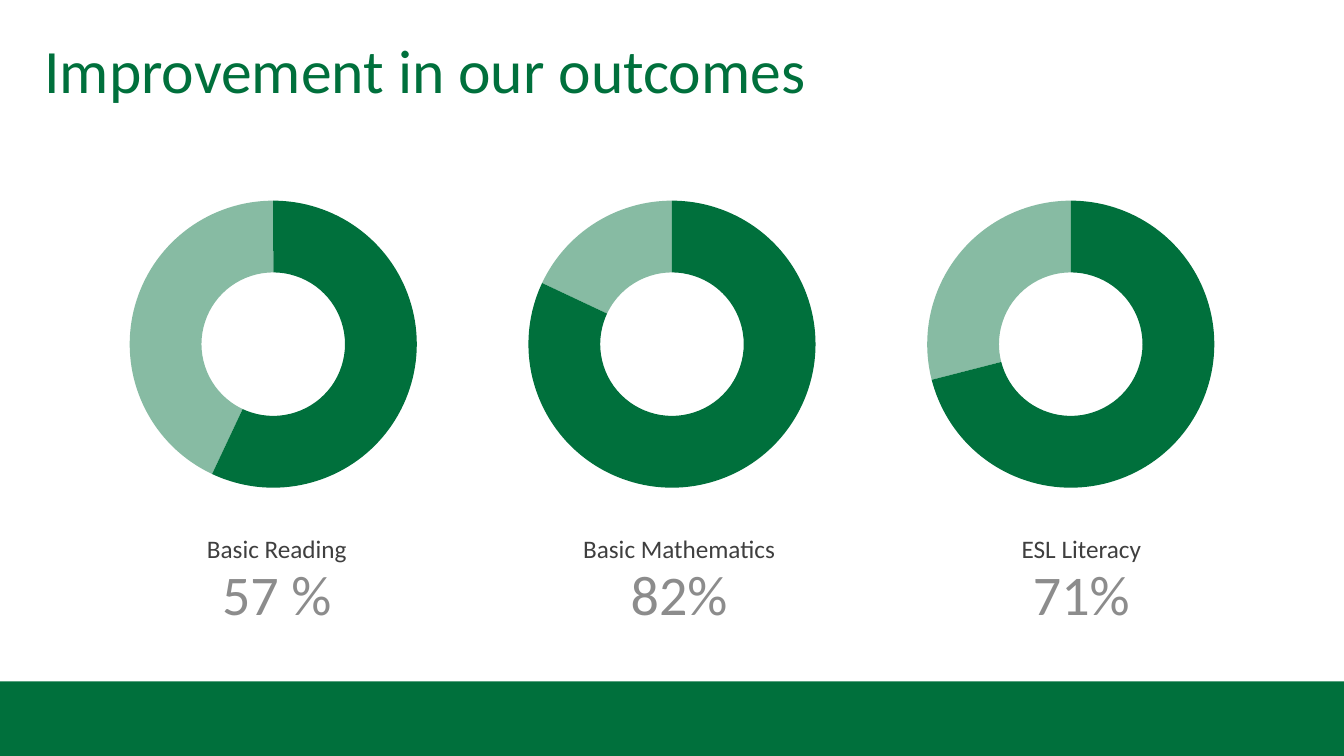
from lxml import etree
from pptx import Presentation
from pptx import util as u
from pptx.chart import data
from pptx.dml.color import RGBColor
from pptx.enum import chart as ch, shapes, text
from pptx.oxml import parse_xml
from pptx.oxml.ns import nsdecls, qn

WIDE, HIGH = u.Inches(13.33), u.Inches(7.5)
GREEN = RGBColor(0x00, 0x70, 0x3C)
DARK = RGBColor(0x3F, 0x3F, 0x3F)
GRAY = RGBColor(0x8C, 0x8C, 0x8C)
FONT = "Calibri"

RING_X, RING_STEP = 2.71, 3.955
WORD_X, WORD_STEP = 2.745, 3.99
GOALS = [
    ("Basic Reading", "57 %", 57),
    ("Basic Mathematics", "82%", 82),
    ("ESL Literacy", "71%", 71),
]


def style(font, size, color):
    font.name = FONT
    font.size = u.Pt(size)
    font.color.rgb = color


def write(frame, words, size, color, align):
    para = frame.paragraphs[0]
    para.alignment = align
    para.line_spacing = 0.9
    para.space_before = u.Pt(0)
    run = para.add_run()
    run.text = words
    style(run.font, size, color)


def head(slide, words):
    title = slide.shapes.title
    title.left, title.top = u.Inches(0.34), 0
    title.width, title.height = u.Inches(13), u.Inches(1.45)
    frame = title.text_frame
    frame.word_wrap = True
    frame.vertical_anchor = text.MSO_ANCHOR.MIDDLE
    write(frame, words, 44, GREEN, text.PP_ALIGN.LEFT)


def band(slide):
    top = u.Inches(6.76)
    bar = slide.shapes.add_shape(
        shapes.MSO_SHAPE.RECTANGLE, 0, top, WIDE, HIGH - top)
    bar.shadow.inherit = False
    bar.fill.solid()
    bar.fill.fore_color.rgb = GREEN
    bar.line.fill.background()


def label(slide, mid, top, high, words, size, color):
    wide = 2.52
    box = slide.shapes.add_textbox(
        u.Inches(mid - wide / 2), u.Inches(top), u.Inches(wide), u.Inches(high))
    box.text_frame.word_wrap = True
    write(box.text_frame, words, size, color, text.PP_ALIGN.CENTER)


def ring(slide, mid, share):
    wide, high, span = 3.24, 3.13, 2.86
    table = data.CategoryChartData()
    table.categories = ["1", "2"]
    table.add_series("Series 1", (share, 100 - share))
    chart = slide.shapes.add_chart(
        ch.XL_CHART_TYPE.DOUGHNUT, u.Inches(mid - wide / 2), u.Inches(1.85),
        u.Inches(wide), u.Inches(high), table).chart
    chart.has_legend = False
    chart.has_title = False
    style(chart.font, 10, DARK)
    plot = chart.plots[0]
    plot.vary_by_categories = True
    for spot in range(2):
        point = plot.series[0].points[spot].format
        point.fill.solid()
        point.fill.fore_color.rgb = GREEN
        point.line.fill.background()
    tint = plot.series[0].points[1].format.fill._xPr.find(
        qn("a:solidFill")).find(qn("a:srgbClr"))
    etree.SubElement(tint, qn("a:alpha")).set("val", "47000")
    area = chart._chartSpace.chart.plotArea
    area.find(qn("c:doughnutChart")).find(qn("c:holeSize")).set("val", "60")
    old = area.find(qn("c:layout"))
    if old is not None:
        area.remove(old)
    w, h = round(span / wide, 2), round(span / high, 2)
    area.insert(0, parse_xml(
        f'<c:layout {nsdecls("c")}><c:manualLayout>'
        '<c:layoutTarget val="inner"/><c:xMode val="edge"/><c:yMode val="edge"/>'
        f'<c:x val="{(1 - w) / 2:.3f}"/><c:y val="{(1 - h) / 2:.3f}"/>'
        f'<c:w val="{w}"/><c:h val="{h}"/></c:manualLayout></c:layout>'))


def main():
    deck = Presentation()
    deck.slide_width, deck.slide_height = WIDE, HIGH
    slide = deck.slides.add_slide(deck.slide_layouts[5])
    band(slide)
    head(slide, "Improvement in our outcomes")
    for col, (name, rate, share) in enumerate(GOALS):
        mid = WORD_X + col * WORD_STEP
        ring(slide, RING_X + col * RING_STEP, share)
        label(slide, mid, 5.28, 0.39, name, 18, DARK)
        label(slide, mid, 5.58, 0.69, rate, 40, GRAY)
    deck.save("out.pptx")


if __name__ == "__main__":
    main()
